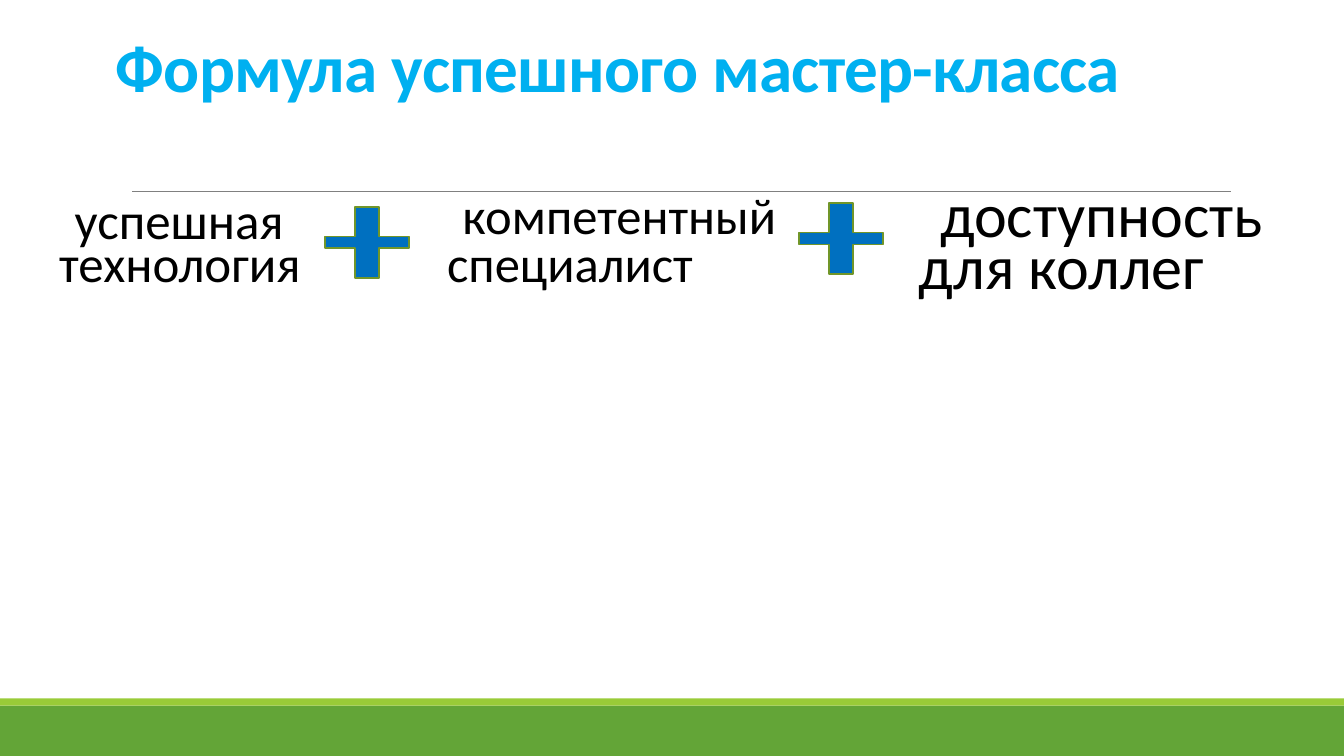
from lxml import etree
from pptx import Presentation
from pptx.dml.color import RGBColor
from pptx.enum.shapes import MSO_CONNECTOR, MSO_SHAPE
from pptx.enum.text import MSO_ANCHOR, PP_ALIGN
from pptx.oxml.ns import qn
from pptx.util import Cm, Pt

RECTANGLE, PLUS = MSO_SHAPE.RECTANGLE, MSO_SHAPE.CROSS
STRAIGHT = MSO_CONNECTOR.STRAIGHT
TOP, LEFT = MSO_ANCHOR.TOP, PP_ALIGN.LEFT

FONT = "Calibri"
BLACK = RGBColor(0x00, 0x00, 0x00)
GRAY = RGBColor(0x80, 0x80, 0x80)
SKY = RGBColor(0x00, 0xB0, 0xF0)
BLUE = RGBColor(0x00, 0x70, 0xC0)
GREEN = RGBColor(0x63, 0xA5, 0x37)
LIME = RGBColor(0x99, 0xCB, 0x38)
OLIVE = RGBColor(0x71, 0x96, 0x29)

WIDTH, HEIGHT = 33.87, 19.05

# Left, top, width, height in cm; then text, size and line spacing
TERMS = [
    ((1.24, 5.05, 8.31, 3.96), "успешная технология", 36.4, 0.7),
    ((11.02, 4.8, 11.2, 4.24), "компетентный специалист", 36.1, 0.8),
    ((22.91, 4.8, 9.47, 3.86), "доступность для коллег", 44.4, 0.7),
]
PLUS_BOXES = [(8.2, 5.21, 2.11, 1.8), (20.14, 5.11, 2.11, 1.8)]


def set_values(target, values):
    for name, value in values.items():
        setattr(target, name, value)


def add_filled_shape(slide, kind, box, color):
    shape = slide.shapes.add_shape(kind, *map(Cm, box))
    shape.shadow.inherit = False
    shape.fill.solid()
    shape.fill.fore_color.rgb = color
    shape.line.fill.background()
    return shape


def write_text(shape, text, frame_values, paragraph_values, font_values, color):
    frame = shape.text_frame
    set_values(frame, {"word_wrap": True, "vertical_anchor": TOP, **frame_values})
    paragraph = frame.paragraphs[0]
    set_values(paragraph, {"alignment": LEFT, **paragraph_values})
    run = paragraph.add_run()
    run.text = text
    set_values(run.font, {"name": FONT, **font_values})
    run.font.color.rgb = color
    return paragraph, run


def add_footer(slide, box):
    left, top, width, height = box
    stripe = 0.18
    add_filled_shape(slide, RECTANGLE, (left, top + stripe, width, height - stripe), GREEN)
    add_filled_shape(slide, RECTANGLE, (left, top, width, stripe), LIME)


def add_heading(slide, box):
    left, top, width, height = box
    title = slide.shapes.title
    set_values(title, dict(zip(("left", "top", "width", "height"), map(Cm, box))))
    _, run = write_text(
        title, "Формула успешного мастер-класса",
        {"margin_left": Cm(0.25), "margin_top": Cm(0.2)},
        {"line_spacing": 0.85}, {"size": Pt(48), "bold": True}, SKY)
    run.font._element.set("spc", "-50")

    # Rule under the title
    rule_top = Cm(top + height + 0.02)
    rule = slide.shapes.add_connector(
        STRAIGHT, Cm(left + 0.66), rule_top, Cm(left + width + 0.4), rule_top)
    rule.line.color.rgb = GRAY
    rule.line.width = Pt(0.5)
    etree.SubElement(rule._element.spPr, qn("a:effectLst"))


def add_term(slide, box, text, size, spacing):
    text_box = slide.shapes.add_textbox(*map(Cm, box))
    paragraph, _ = write_text(
        text_box, text, {"margin_left": 0, "margin_right": 0},
        {"line_spacing": spacing, "space_before": Pt(3), "space_after": Pt(2)},
        {"size": Pt(size)}, BLACK)
    # Hanging indent with a blank bullet
    properties = paragraph._p.get_or_add_pPr()
    properties.set("marL", str(Cm(0.25)))
    properties.set("indent", str(-Cm(0.25)))
    etree.SubElement(properties, qn("a:buChar")).set("char", " ")


def add_plus(slide, box):
    plus = add_filled_shape(slide, PLUS, box, BLUE)
    plus.adjustments[0] = 0.417
    plus.line.color.rgb = OLIVE
    plus.line.width = Pt(1.25)


def main():
    presentation = Presentation()
    presentation.slide_width = Cm(WIDTH)
    presentation.slide_height = Cm(HEIGHT)
    slide = presentation.slides.add_slide(presentation.slide_layouts[5])

    add_footer(slide, (0, 17.6, WIDTH, HEIGHT - 17.6))
    add_heading(slide, (2.67, 0.76, 27.94, 4.04))
    for term in TERMS:
        add_term(slide, *term)
    for box in PLUS_BOXES:
        add_plus(slide, box)

    presentation.save("out.pptx")


if __name__ == "__main__":
    main()
